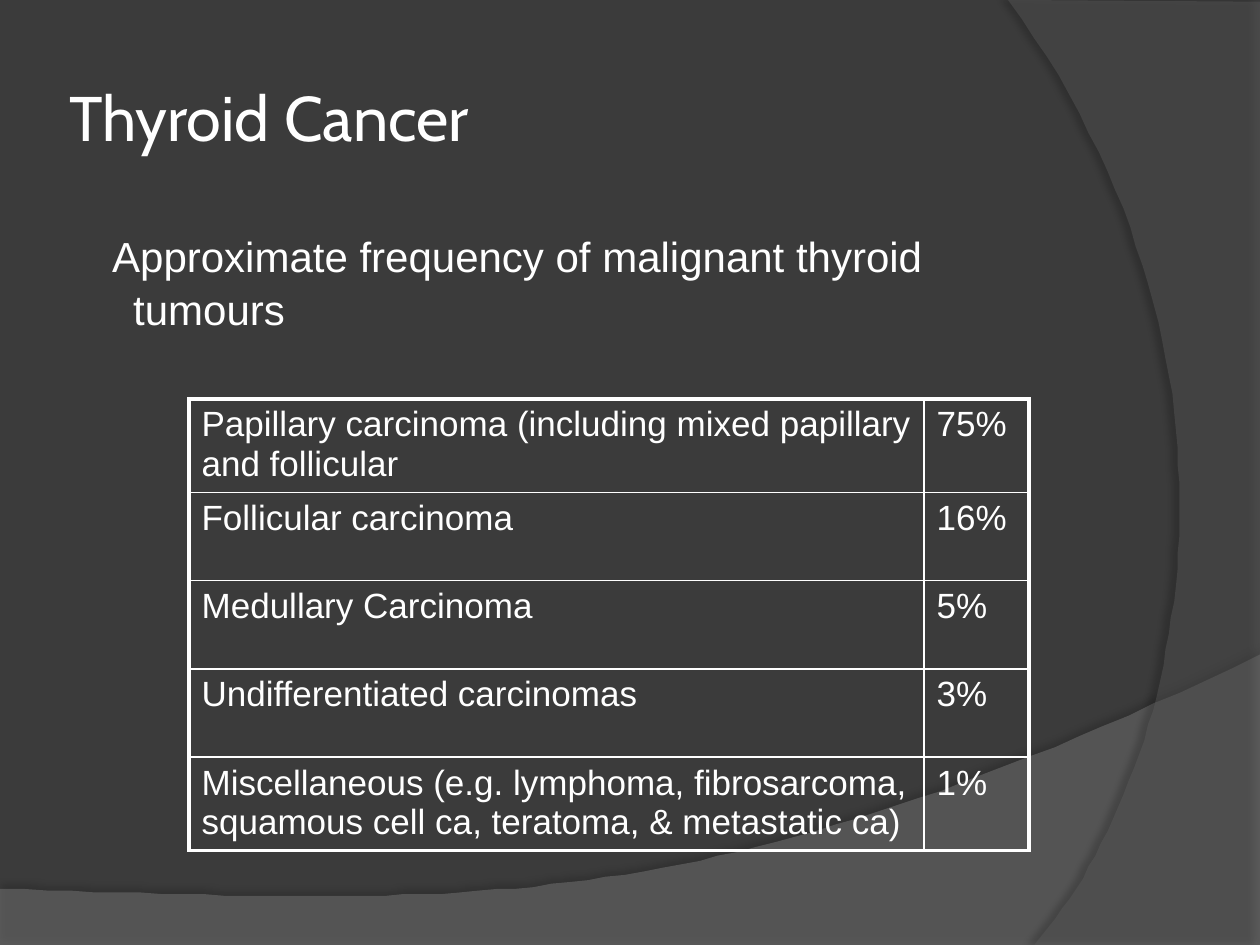
from pptx import Presentation
from pptx.util import Pt
from pptx.dml.color import RGBColor as RGB
from pptx.enum.text import MSO_ANCHOR as Anchor
from pptx.oxml import parse_xml
from pptx.oxml.ns import nsdecls, qn
from lxml import etree

INK = {"back": "3B3B3B", "band": "7F7F7F", "arc": "5E5E5E", "text": "FFFFFF",
       "shade": "000000"}
THIN, THICK = 1, 2.25

deck = Presentation()
deck.slide_width, deck.slide_height = Pt(720), Pt(540)
slide = deck.slides.add_slide(deck.slide_layouts[6])
slide.background.fill.solid()
slide.background.fill.fore_color.rgb = RGB.from_string(INK["back"])


def curve(a, b, c, d, steps=60):
    """Points along a cubic Bezier curve."""
    points = []
    for i in range(steps + 1):
        t = i / steps
        u = 1 - t
        points.append(tuple(u**3 * p + 3 * u * u * t * q + 3 * u * t * t * r + t**3 * s
                            for p, q, r, s in zip(a, b, c, d)))
    return points


def write(para, text, size, font):
    para.text = text
    para.font.size, para.font.name = Pt(size), font
    para.font.color.rgb = RGB.from_string(INK["text"])


# Background sweeps: colour, opacity, outline, shadow opacity, distance and angle
band = [(0, 540), (720, 540)] + curve((720, 374.4), (402.5, 524.9), (281.5, 517.7), (0, 507.6))
arc = [(720, 1.4), (720, 540)] + curve((591.1, 540), (673.2, 445.7), (733, 216), (576, 0))
for ink, alpha, points, dark, gap, turn in [("band", 45, band, 35, 3.5, 270),
                                            ("arc", 40, arc, 45, 4, 180)]:
    pen = slide.shapes.build_freeform(*points[0], scale=Pt(1))
    pen.add_line_segments(points[1:], close=True)
    sweep = pen.convert_to_shape()
    sweep.line.fill.background()
    sweep.fill.solid()
    sweep.fill.fore_color.rgb = RGB.from_string(INK[ink])
    tint = sweep.fill._xPr.find(".//" + qn("a:srgbClr"))
    etree.SubElement(tint, qn("a:alpha"), val=str(alpha * 1000))
    sweep._element.spPr.append(parse_xml(
        f'<a:effectLst {nsdecls("a")}><a:outerShdw blurRad="{Pt(4)}" dist="{Pt(gap)}" '
        f'dir="{turn * 60000}" rotWithShape="0"><a:srgbClr val="{INK["shade"]}">'
        f'<a:alpha val="{dark * 1000}"/></a:srgbClr></a:outerShdw></a:effectLst>'))

# Title
title = slide.shapes.add_textbox(Pt(36), Pt(21.6), Pt(588), Pt(90)).text_frame
title.word_wrap = True
title.vertical_anchor = Anchor.MIDDLE
title.margin_left = title.margin_right = Pt(3.6)
write(title.paragraphs[0], "Thyroid Cancer", 36, "Cabin")

# Lead text with a hanging indent
lead = slide.shapes.add_textbox(Pt(36), Pt(127), Pt(588), Pt(356)).text_frame
lead.word_wrap = True
para = lead.paragraphs[0]
props = para._p.get_or_add_pPr()
props.set("marL", str(Pt(33)))
props.set("indent", str(Pt(-12)))
para.line_spacing = 1.05
write(para, "Approximate frequency of malignant thyroid tumours", 24, "Arial")

# Frequency table
rows = [
    ("Papillary carcinoma (including mixed papillary and follicular", "75%"),
    ("Follicular carcinoma", "16%"),
    ("Medullary Carcinoma", "5%"),
    ("Undifferentiated carcinomas", "3%"),
    ("Miscellaneous (e.g. lymphoma, fibrosarcoma, squamous cell ca, teratoma, "
     "& metastatic ca)", "1%"),
]
high = 50.4
table = slide.shapes.add_table(len(rows), 2, Pt(108), Pt(228), Pt(480),
                               Pt(high * len(rows))).table
table.first_row = table.horz_banding = False
table.columns[0].width, table.columns[1].width = Pt(420), Pt(60)
for r, row in enumerate(rows):
    table.rows[r].height = Pt(high)
    for c, text in enumerate(row):
        cell = table.cell(r, c)
        cell.fill.background()
        cell.margin_bottom = Pt(1.8)
        write(cell.text_frame.paragraphs[0], text, 20, "Arial")
        # Thick lines on the outer edges, thin ones inside
        outer = {"L": c == 0, "R": c == 1, "T": r == 0, "B": r == len(rows) - 1}
        for i, (side, edge) in enumerate(outer.items()):
            cell._tc.get_or_add_tcPr().insert(i, parse_xml(
                f'<a:ln{side} {nsdecls("a")} w="{Pt(THICK if edge else THIN)}"><a:solidFill>'
                f'<a:srgbClr val="{INK["text"]}"/></a:solidFill></a:ln{side}>'))

deck.save("out.pptx")
